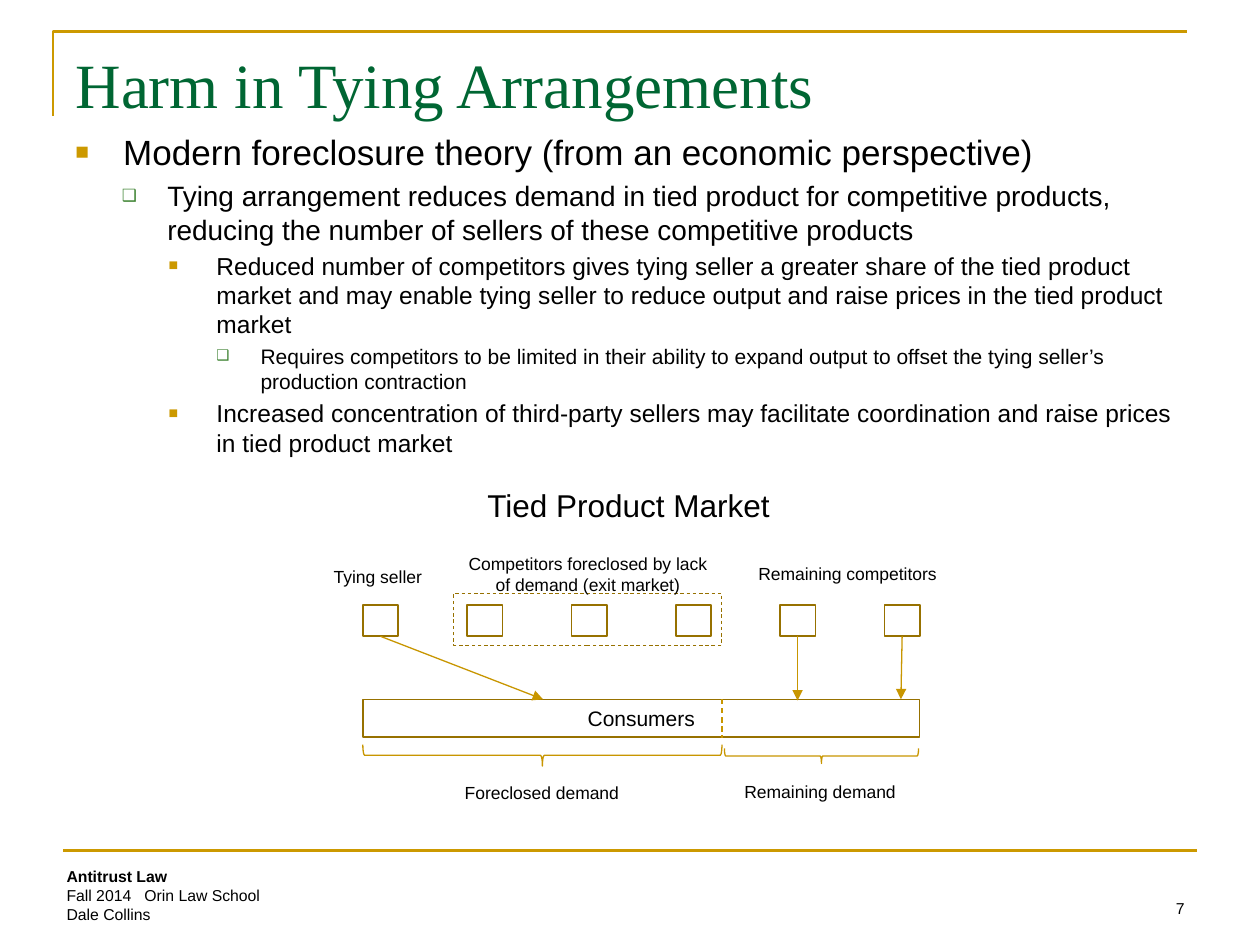
"""Build the slide on harm in tying arrangements."""
from lxml import etree
from pptx import Presentation
from pptx import util as u
from pptx.dml.color import RGBColor
from pptx.enum import dml, shapes, text
from pptx.oxml.ns import qn

GOLD = RGBColor(0xCC, 0x99, 0x00)
DARK_GOLD = RGBColor(0x97, 0x71, 0x00)
LINE_GOLD = RGBColor(0xC8, 0x96, 0x00)
LEAF = RGBColor(0x3B, 0x81, 0x2F)
GREEN = RGBColor(0x00, 0x66, 0x33)
BLACK = RGBColor(0, 0, 0)
SHAPE = shapes.MSO_SHAPE
ALIGN = text.PP_ALIGN
DASH = dml.MSO_LINE.DASH


def add_text(tf, words, size, alignment=ALIGN.LEFT):
    p = tf.paragraphs[0]
    p.text = words
    p.alignment = alignment
    for r in p.runs:
        for key, value in {"size": u.Pt(size), "name": "Arial"}.items():
            setattr(r.font, key, value)
        r.font.color.rgb = BLACK
    return p


def set_line(sp, color, width, dash=None):
    sp.line.color.rgb = color
    sp.line.width = u.Pt(width)
    if dash:
        sp.line.dash_style = dash
    if sp.shape_type == shapes.MSO_SHAPE_TYPE.LINE:
        etree.SubElement(sp.line._get_or_add_ln().getparent(), qn("a:effectLst"))
    else:
        sp.fill.background()
        sp.shadow.inherit = False


prs = Presentation()
prs.slide_width, prs.slide_height = u.Inches(10), u.Inches(7.5)
s = prs.slides.add_slide(prs.slide_layouts[5])

fb = s.shapes.build_freeform(u.Inches(0.42), u.Inches(0.92))
fb.add_line_segments([(u.Inches(x), u.Inches(0.25)) for x in (0.42, 9.42)], close=False)
set_line(fb.convert_to_shape(), GOLD, 1.5)

title = s.shapes.title
title.left, title.top, title.width, title.height = map(u.Inches, (0.5, 0.3, 9, 0.68))
tf = title.text_frame
tf.text = "Harm in Tying Arrangements"
tf.auto_size = text.MSO_AUTO_SIZE.NONE
tf.vertical_anchor = text.MSO_ANCHOR.BOTTOM
tf.margin_bottom = u.Inches(0.02)
tf.paragraphs[0].alignment = ALIGN.LEFT
font = tf.paragraphs[0].runs[0].font
font.name, font.size, font.color.rgb = "Times New Roman", u.Pt(36), GREEN

levels = [
    (20, 12, 0.38, 0.38, "■", GOLD, 65),
    (16, 3.2, 0.73, 0.36, "❑", LEAF, 60),
    (14, 2.8, 1.12, 0.38, "■", GOLD, 65),
    (12, 2.4, 1.47, 0.35, "❑", LEAF, 70),
]
outline = [
    (0, "Modern foreclosure theory (from an economic perspective)"),
    (1, "Tying arrangement reduces demand in tied product for competitive products, "
        "reducing the number of sellers of these competitive products"),
    (2, "Reduced number of competitors gives tying seller a greater share of the tied "
        "product market and may enable tying seller to reduce output and raise prices "
        "in the tied product market"),
    (3, "Requires competitors to be limited in their ability to expand output to offset "
        "the tying seller’s production contraction"),
    (2, "Increased concentration of third-party sellers may facilitate coordination "
        "and raise prices in tied product market"),
]
tf = s.shapes.add_textbox(*map(u.Inches, (0.5, 0.99, 9, 5.71))).text_frame
tf.word_wrap = True
for i, (level, words) in enumerate(outline):
    size, before, left, hang, mark, color, percent = levels[level]
    p = tf.add_paragraph() if i else tf.paragraphs[0]
    p.level = level
    p.space_before = u.Pt(before)
    r = p.add_run()
    r.text = words
    r.font.name, r.font.size, r.font.color.rgb = "Arial", u.Pt(size), BLACK
    pPr = p._p.get_or_add_pPr()
    pPr.set("marL", str(u.Inches(left)))
    pPr.set("indent", str(-u.Inches(hang)))
    bullet_color = etree.SubElement(pPr, qn("a:buClr"))
    etree.SubElement(bullet_color, qn("a:srgbClr"), val=str(color))
    etree.SubElement(pPr, qn("a:buSzPct"), val=str(percent * 1000))
    etree.SubElement(pPr, qn("a:buFont"), typeface="Arial")
    etree.SubElement(pPr, qn("a:buChar"), char=mark)

pitch = (7.02 - 2.88) / 5
for i in range(6):
    seller = s.shapes.add_shape(
        SHAPE.RECTANGLE, *map(u.Inches, (2.88 + i * pitch, 4.8, 0.28, 0.25)))
    set_line(seller, DARK_GOLD, 1)

consumers = s.shapes.add_shape(SHAPE.RECTANGLE, *map(u.Inches, (2.88, 5.55, 4.42, 0.3)))
set_line(consumers, DARK_GOLD, 0.75)
add_text(consumers.text_frame, "Consumers", 12, ALIGN.CENTER)

foreclosed = s.shapes.add_shape(SHAPE.RECTANGLE, *map(u.Inches, (3.6, 4.71, 2.13, 0.41)))
set_line(foreclosed, DARK_GOLD, 0.5, DASH)

for box in [(4.22, 4.57, 0.17, 2.85), (6.46, 5.23, 0.12, 1.54)]:
    brace = s.shapes.add_shape(SHAPE.LEFT_BRACE, *map(u.Inches, box))
    brace.rotation = 270
    set_line(brace, LINE_GOLD, 0.75)

labels = [
    ("Tied Product Market", 18, False, (3.77, 3.81, 2.46, 0.4)),
    ("Tying seller", 10, False, (2.55, 4.44, 0.92, 0.27)),
    ("Competitors foreclosed by lack of demand (exit market)", 10, True,
     (3.6, 4.34, 2.13, 0.44)),
    ("Remaining competitors", 10, False, (5.92, 4.42, 1.63, 0.27)),
    ("Foreclosed demand", 10, False, (3.59, 6.16, 1.43, 0.27)),
    ("Remaining demand", 10, False, (5.81, 6.15, 1.41, 0.27)),
]
for words, size, wrap, box in labels:
    tf = s.shapes.add_textbox(*map(u.Inches, box)).text_frame
    tf.word_wrap = wrap
    add_text(tf, words, size, ALIGN.CENTER if wrap else ALIGN.LEFT)

lines = [
    ((0.5, 6.75, 9.5, 6.75), GOLD, 1.5, None, False),
    ((5.73, 5.55, 5.73, 5.86), LINE_GOLD, 0.75, DASH, False),
    ((3.02, 5.05, 4.31, 5.55), LINE_GOLD, 0.75, None, True),
    ((6.33, 5.05, 6.33, 5.56), LINE_GOLD, 0.75, None, True),
    ((7.16, 5.05, 7.15, 5.55), LINE_GOLD, 0.75, None, True),
]
for ends, color, width, dash, arrow in lines:
    line = s.shapes.add_connector(shapes.MSO_CONNECTOR.STRAIGHT, *map(u.Inches, ends))
    set_line(line, color, width, dash)
    if arrow:
        etree.SubElement(line.line._get_or_add_ln(), qn("a:tailEnd"), type="triangle")

tf = s.shapes.add_textbox(*map(u.Inches, (0.43, 6.83, 4.67, 0.56))).text_frame
tf.word_wrap = True
p = add_text(tf, "Antitrust Law\vFall 2014   Orin Law School\vDale Collins", 9)
p.runs[0].font.bold = True

tf = s.shapes.add_textbox(*map(u.Inches, (7.17, 6.83, 2.33, 0.5))).text_frame
tf.word_wrap = True
tf.vertical_anchor = text.MSO_ANCHOR.BOTTOM
add_text(tf, "7", 9, ALIGN.RIGHT)

prs.save("out.pptx")
